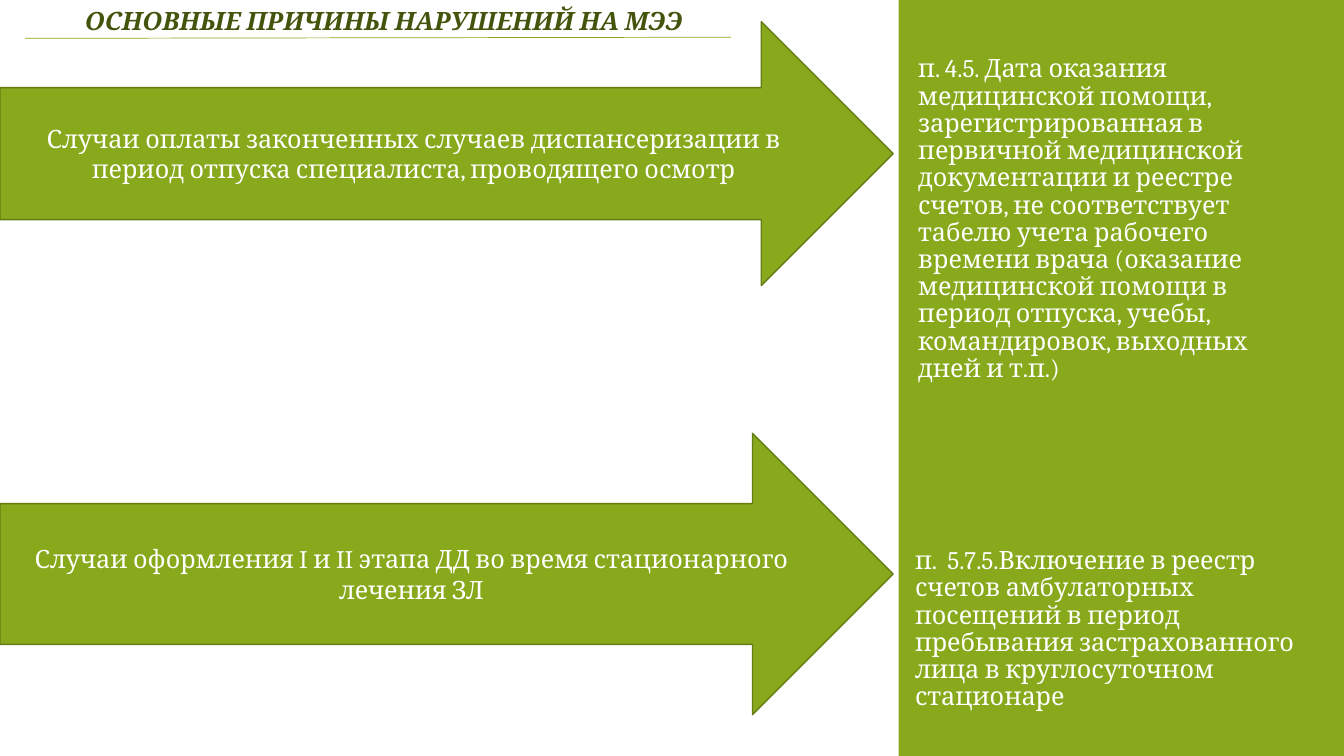
from lxml import etree
from pptx import Presentation
from pptx import util as u
from pptx.dml.color import RGBColor
from pptx.enum import shapes, text
from pptx.oxml.ns import qn

GREEN = RGBColor(0x87, 0xA9, 0x1B)
OUTLINE = RGBColor(0x64, 0x7D, 0x14)
HEADING = RGBColor(0x43, 0x54, 0x0D)
WHITE = RGBColor(0xFF, 0xFF, 0xFF)


def write(shape, content, color, anchor, align):
    """Fill a shape with one paragraph of 18-point Cambria."""
    frame = shape.text_frame
    frame.word_wrap = True
    frame.vertical_anchor = anchor
    paragraph = frame.paragraphs[0]
    paragraph.text = content
    paragraph.alignment = align
    paragraph.font.name = "Cambria"
    paragraph.font.size = u.Pt(18)
    paragraph.font.color.rgb = color
    return paragraph


def add_panel(slide, left, width, height):
    """Add the green side panel."""
    panel = slide.shapes.add_shape(
        shapes.MSO_SHAPE.RECTANGLE, u.Pt(left), u.Pt(0), u.Pt(width), u.Pt(height))
    panel.shadow.inherit = False
    panel.fill.solid()
    panel.fill.fore_color.rgb = GREEN
    panel.line.fill.background()


def add_arrow(slide, top, height, content):
    """Add a wide arrow that points from a cause to its clause."""
    arrow = slide.shapes.add_shape(
        shapes.MSO_SHAPE.RIGHT_ARROW, u.Pt(0), u.Pt(top), u.Pt(638), u.Pt(height))
    arrow.shadow.inherit = False
    arrow.fill.solid()
    arrow.fill.fore_color.rgb = GREEN
    arrow.line.color.rgb = OUTLINE
    arrow.line.width = u.Pt(1)
    write(arrow, content, WHITE, text.MSO_ANCHOR.MIDDLE, text.PP_ALIGN.CENTER)


def add_clause(slide, left, top, width, height, content):
    """Add a clause of the rules on the panel."""
    box = slide.shapes.add_textbox(u.Pt(left), u.Pt(top), u.Pt(width), u.Pt(height))
    paragraph = write(box, content, WHITE, text.MSO_ANCHOR.BOTTOM, text.PP_ALIGN.LEFT)
    paragraph.line_spacing = 0.9


def add_heading(slide, content):
    """Add the slide heading and the thin rule under it."""
    rule = slide.shapes.add_connector(
        shapes.MSO_CONNECTOR.STRAIGHT, u.Pt(18), u.Pt(27.4), u.Pt(522), u.Pt(26.6))
    rule.line.color.rgb = GREEN
    rule.line.width = u.Pt(0.5)
    etree.SubElement(rule._element.spPr, qn("a:effectLst"))
    box = slide.shapes.add_textbox(u.Pt(18), u.Pt(0), u.Pt(512.6), u.Pt(29))
    paragraph = write(box, content, HEADING, text.MSO_ANCHOR.TOP, text.PP_ALIGN.CENTER)
    paragraph.font.bold = True
    paragraph.font.italic = True


def main():
    """Build the slide and save it."""
    presentation = Presentation()
    presentation.slide_width = u.Pt(960)
    presentation.slide_height = u.Pt(540)
    slide = presentation.slides.add_slide(presentation.slide_layouts[6])
    add_panel(slide, 642, 318, 540)
    add_clause(slide, 646.5, 385, 306, 126.5,
               "п.  5.7.5.Включение в реестр счетов амбулаторных посещений в период "
               "пребывания застрахованного лица в круглосуточном стационаре")
    add_clause(slide, 648.8, 41, 295, 236,
               "п. 4.5. Дата оказания медицинской помощи, зарегистрированная в "
               "первичной медицинской документации и реестре счетов, не соответствует "
               "табелю учета рабочего времени врача (оказание медицинской помощи в "
               "период отпуска, учебы, командировок, выходных дней и т.п.)")
    add_arrow(slide, 309.5, 201,
              "Случаи оформления I и II этапа ДД во время стационарного лечения ЗЛ")
    add_arrow(slide, 15.5, 188.5,
              "Случаи оплаты законченных случаев диспансеризации в период отпуска "
              "специалиста, проводящего осмотр")
    add_heading(slide, "ОСНОВНЫЕ ПРИЧИНЫ НАРУШЕНИЙ НА МЭЭ")
    presentation.save("out.pptx")


if __name__ == "__main__":
    main()
